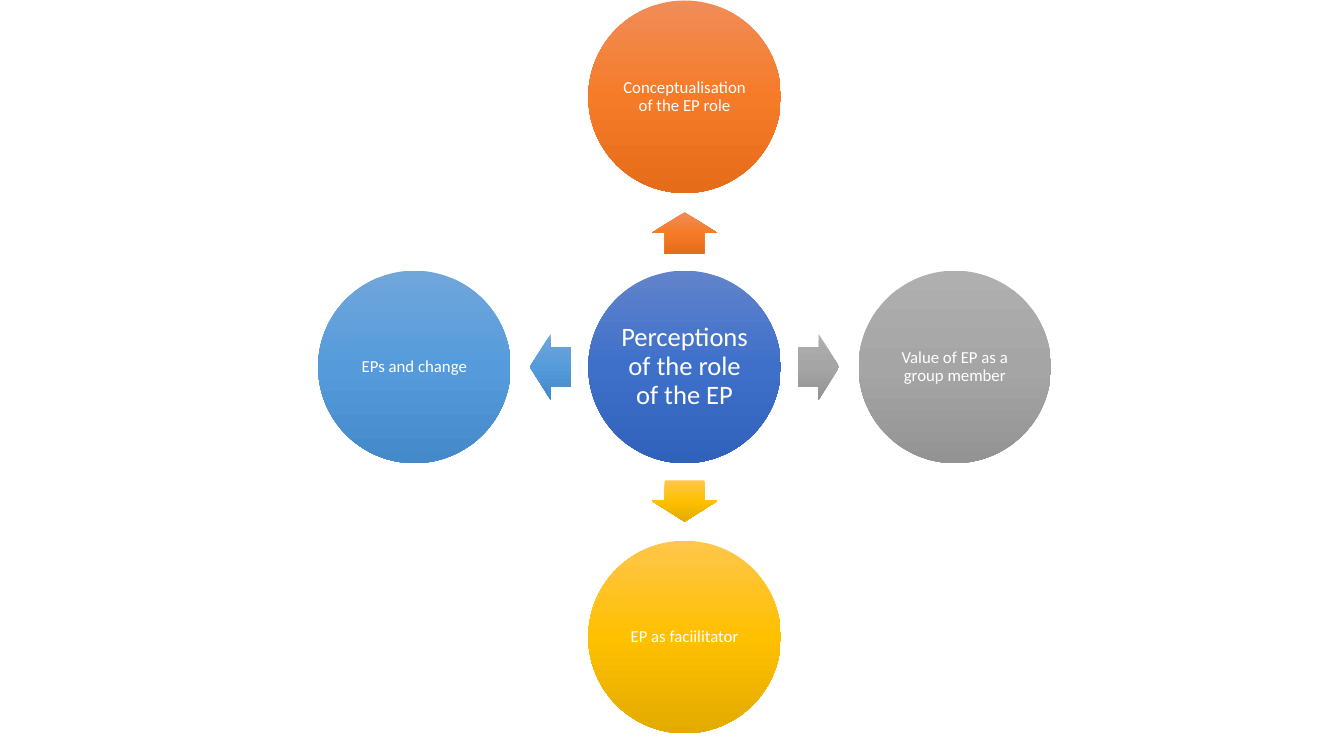
from copy import deepcopy

from pptx import Presentation
from pptx.dml.color import RGBColor
from pptx.enum.shapes import MSO_SHAPE
from pptx.enum.text import MSO_ANCHOR, PP_ALIGN
from pptx.util import Inches, Pt

WHITE = RGBColor(0xFF, 0xFF, 0xFF)
BLUE = (RGBColor(0x61, 0x83, 0xCB), RGBColor(0x3E, 0x70, 0xCA), RGBColor(0x30, 0x62, 0xBB))
ORANGE = (RGBColor(0xF1, 0x8C, 0x57), RGBColor(0xF6, 0x7B, 0x28), RGBColor(0xE5, 0x6C, 0x19))
GREY = (RGBColor(0xAF, 0xAF, 0xAF), RGBColor(0xA5, 0xA5, 0xA5), RGBColor(0x93, 0x93, 0x93))
GOLD = (RGBColor(0xFF, 0xC6, 0x4B), RGBColor(0xFF, 0xC0, 0x00), RGBColor(0xE3, 0xAB, 0x00))
SKY = (RGBColor(0x71, 0xA6, 0xDB), RGBColor(0x55, 0x9B, 0xDB), RGBColor(0x44, 0x8A, 0xCA))

HUB_X, HUB_Y = 6.79, 3.64
CELL = 2.68
DISC = 1.91
GAP = 1.33 / CELL

SPOKES = [
    ("Conceptualisation of the EP role", 0, -1, 270, ORANGE),
    ("Value of EP as a group member", 1, 0, 0, GREY),
    ("EP as faciilitator", 0, 1, 90, GOLD),
    ("EPs and change", -1, 0, 180, SKY),
]


def add_form(slide, kind, col, row, width, height, tones):
    """Add a shaded shape centred on a grid point counted from the hub."""
    left = HUB_X + col * CELL - width / 2
    top = HUB_Y + row * CELL - height / 2
    form = slide.shapes.add_shape(kind, Inches(left), Inches(top), Inches(width), Inches(height))
    form.shadow.inherit = False
    form.line.fill.background()
    shade(form, tones)
    return form


def shade(form, tones):
    """Fill a shape from top to bottom with three tones, whatever its turn."""
    form.fill.gradient()
    form.fill.gradient_angle = 270
    grad = form._element.spPr.gradFill
    grad.set("rotWithShape", "0")
    first = grad.gsLst[0]
    first.addnext(deepcopy(first))
    for index, (stop, tone) in enumerate(zip(form.fill.gradient_stops, tones)):
        stop.position = index / 2
        stop.color.rgb = tone


def add_disc(slide, text, col, row, tones, size=12, inset=0.02):
    """Add a circle with centred white text."""
    disc = add_form(slide, MSO_SHAPE.OVAL, col, row, DISC, DISC, tones)
    frame = disc.text_frame
    frame.word_wrap = True
    frame.vertical_anchor = MSO_ANCHOR.MIDDLE
    frame.margin_left = frame.margin_right = Inches(inset)
    frame.margin_top = frame.margin_bottom = Inches(inset)
    para = frame.paragraphs[0]
    para.alignment = PP_ALIGN.CENTER
    para.line_spacing = 0.9
    run = para.add_run()
    run.text = text
    run.font.name = "Calibri"
    run.font.size = Pt(size)
    run.font.color.rgb = WHITE


def add_arrow(slide, col, row, turn, tones):
    """Add a block arrow that points away from the hub."""
    arrow = add_form(slide, MSO_SHAPE.RIGHT_ARROW, col, row, 0.41, 0.65, tones)
    arrow.adjustments[0] = 0.6
    arrow.adjustments[1] = 0.5
    arrow.rotation = turn


def main():
    """Build the hub and its four spokes."""
    deck = Presentation()
    deck.slide_width, deck.slide_height = Inches(13.33), Inches(7.5)
    slide = deck.slides.add_slide(deck.slide_layouts[6])
    add_disc(slide, "Perceptions of the role of the EP", 0, 0, BLUE, 19, 0.03)
    for text, col, row, turn, tones in SPOKES:
        add_arrow(slide, col * GAP, row * GAP, turn, tones)
        add_disc(slide, text, col, row, tones)
    deck.save("out.pptx")


if __name__ == "__main__":
    main()
